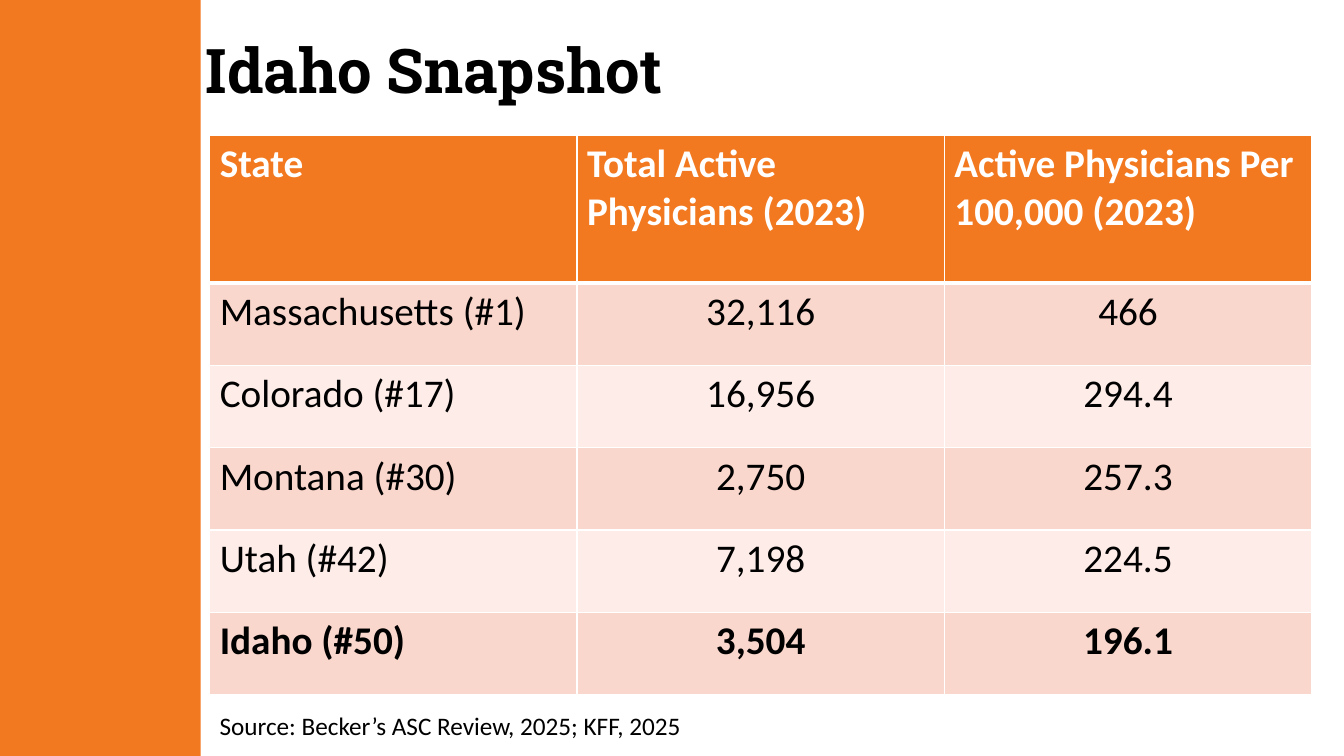
from dataclasses import dataclass

from lxml import etree
from pptx import Presentation
from pptx.dml.color import RGBColor
from pptx.enum.shapes import MSO_SHAPE as Shape
from pptx.enum.text import MSO_ANCHOR as Anchor, MSO_AUTO_SIZE as AutoSize, PP_ALIGN as Align
from pptx.oxml.ns import qn
from pptx.util import Inches, Pt


@dataclass(frozen=True)
class Theme:
    orange: str = "F37920"
    white: str = "FFFFFF"
    black: str = "000000"
    bands: tuple = ("FAD7CD", "FDECE8")
    title_font: str = "Roboto Slab"
    body_font: str = "Calibri"
    title_size: int = 44
    table_size: int = 28
    source_size: int = 18


THEME = Theme()

HEADINGS = ("State", "Total Active Physicians (2023)", "Active Physicians Per 100,000 (2023)")
STATES = (
    ("Massachusetts (#1)", "32,116", "466"),
    ("Colorado (#17)", "16,956", "294.4"),
    ("Montana (#30)", "2,750", "257.3"),
    ("Utah (#42)", "7,198", "224.5"),
    ("Idaho (#50)", "3,504", "196.1"),
)


def write_text(frame, text, *, size, font=THEME.body_font, color=THEME.black,
               bold=False, align=Align.LEFT, spacing=None):
    paragraph = frame.paragraphs[0]
    paragraph.alignment = align
    paragraph.line_spacing = spacing
    run = paragraph.add_run()
    run.text = text
    run.font.name = font
    run.font.size = Pt(size)
    run.font.bold = bold
    run.font.color.rgb = RGBColor.from_string(color)


def fill_solid(target, color):
    target.fill.solid()
    target.fill.fore_color.rgb = RGBColor.from_string(color)


def set_borders(cell, widths):
    """Draw white cell borders; the fill element must follow them."""
    properties = cell._tc.get_or_add_tcPr()
    for side, width in widths.items():
        line = etree.SubElement(properties, qn(f"a:ln{side}"), w=str(Pt(width)))
        solid = etree.SubElement(line, qn("a:solidFill"))
        etree.SubElement(solid, qn("a:srgbClr"), val=THEME.white)


def add_side_band(slide, left, top, width, height):
    band = slide.shapes.add_shape(
        Shape.RECTANGLE, Inches(left), Inches(top), Inches(width), Inches(height))
    band.shadow.inherit = False
    fill_solid(band, THEME.orange)
    band.line.fill.background()


def add_title(slide, left, top, width, height):
    title = slide.shapes.title
    title.left, title.top = Inches(left), Inches(top)
    title.width, title.height = Inches(width), Inches(height)
    title.text_frame.vertical_anchor = Anchor.MIDDLE
    write_text(title.text_frame, "Idaho Snapshot", size=THEME.title_size,
               font=THEME.title_font, bold=True, spacing=0.9)


def add_physician_table(slide, left, top, width, height, header_height=1.47):
    rows = (HEADINGS, *STATES)
    table = slide.shapes.add_table(
        len(rows), len(HEADINGS), Inches(left), Inches(top), Inches(width), Inches(height)).table
    for column in table.columns:
        column.width = Inches(width / len(HEADINGS))

    for row_index, values in enumerate(rows):
        is_header = row_index == 0
        is_idaho = row_index == len(STATES)
        row_height = header_height if is_header else (height - header_height) / len(STATES)
        table.rows[row_index].height = Inches(row_height)
        for column_index, value in enumerate(values):
            cell = table.cell(row_index, column_index)
            set_borders(cell, {"L": 1, "R": 1, "T": 3 if row_index == 1 else 1,
                               "B": 3 if is_header else 1})
            fill_solid(cell, THEME.orange if is_header else THEME.bands[(row_index - 1) % 2])
            centered = column_index > 0 and not is_header
            write_text(cell.text_frame, value, size=THEME.table_size,
                       color=THEME.white if is_header else THEME.black,
                       bold=is_header or is_idaho,
                       align=Align.CENTER if centered else Align.LEFT)


def add_source(slide, left, top, width, height):
    box = slide.shapes.add_textbox(Inches(left), Inches(top), Inches(width), Inches(height))
    box.text_frame.word_wrap = True
    box.text_frame.auto_size = AutoSize.SHAPE_TO_FIT_TEXT
    write_text(box.text_frame, "Source: Becker’s ASC Review, 2025; KFF, 2025",
               size=THEME.source_size)


def main():
    presentation = Presentation()
    presentation.slide_width = Inches(13.33)
    presentation.slide_height = Inches(7.5)
    slide = presentation.slides.add_slide(presentation.slide_layouts[5])
    fill_solid(slide.background, THEME.white)

    # Band and title
    add_side_band(slide, 0, 0, 1.99, 7.5)
    add_title(slide, 1.94, 0, 10.56, 1.45)

    # Table and its source
    add_physician_table(slide, 2.08, 1.34, 10.93, 5.55)
    add_source(slide, 2.08, 7, 7.2, 0.4)

    presentation.save("out.pptx")


if __name__ == "__main__":
    main()
